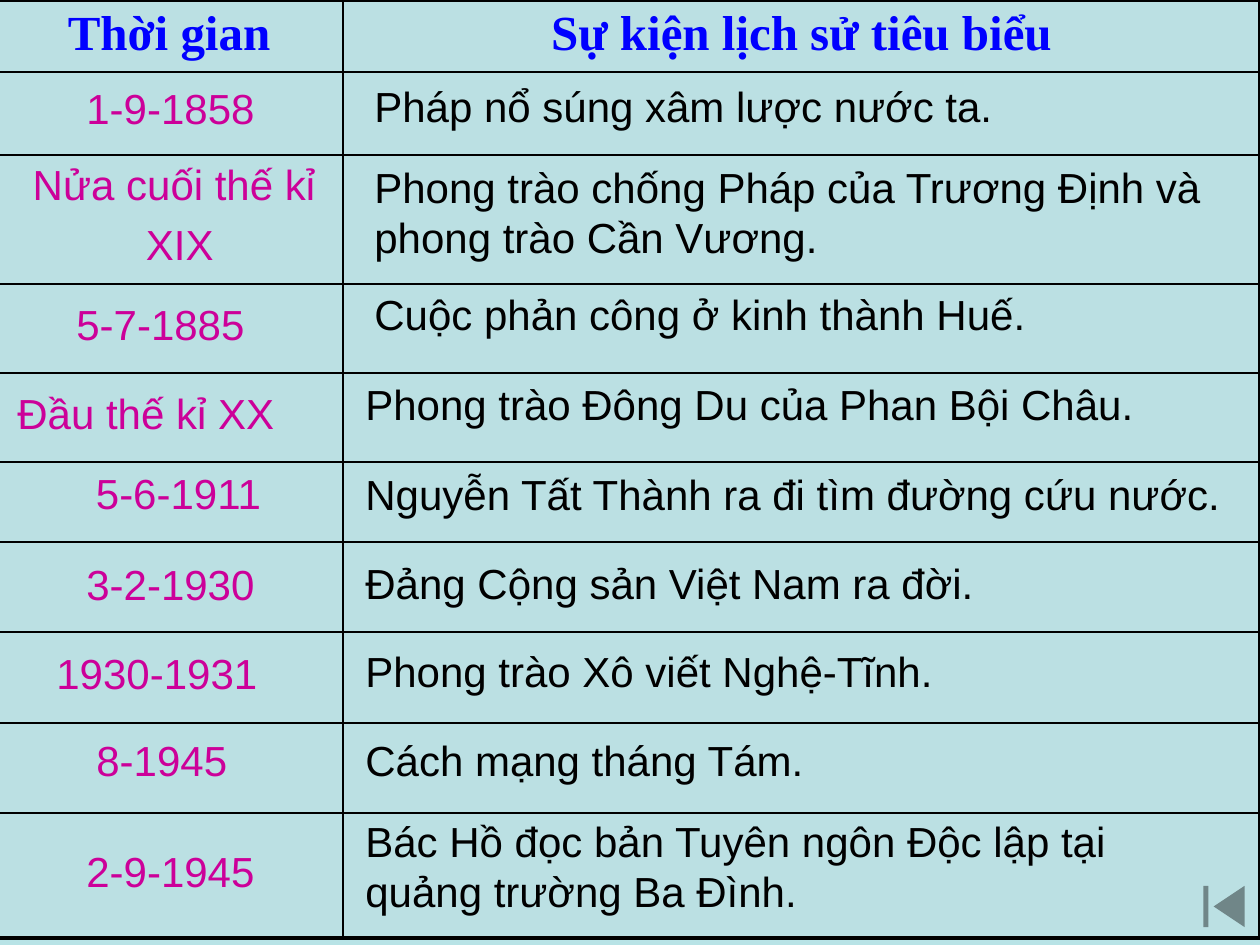
import copy

import lxml.etree
import pptx
import pptx.dml.color
import pptx.enum.shapes
import pptx.enum.text
import pptx.oxml.ns
import pptx.util

PX = 914400 // 126
COLORS = {
    "cell": "BBE0E3", "header": "0000FF", "date": "CC0099", "event": "000000",
    "border": "000000", "top": "6D8688", "middle": "9BBFC2", "bottom": "B8E3E6",
}
LEFT = pptx.enum.text.PP_ALIGN.LEFT
CENTER = pptx.enum.text.PP_ALIGN.CENTER
TABLE_LEFT, TABLE_TOP = -5, 0
COLUMN_WIDTHS = [348, 917]
ROW_HEIGHTS = [72, 83, 129, 89, 89, 80, 90, 91, 90, 125]
HEADERS = ["Thời gian", "Sự kiện lịch sử tiêu biểu"]

# Text, alignment, and left, top, width, height relative to the table cell
DATES = [
    ("1-9-1858", LEFT, (79, 4, 248, 64)),
    ("Nửa cuối thế kỉ\n XIX", CENTER, (10, -3, 338, 202)),
    ("5-7-1885", LEFT, (69, 8, 338, 140)),
    ("Đầu thế kỉ XX", LEFT, (10, 8, 387, 64)),
    ("5-6-1911", CENTER, (0, -1, 367, 140)),
    ("3-2-1930", LEFT, (79, 10, 277, 64)),
    ("1930-1931", LEFT, (49, 9, 297, 64)),
    ("8-1945", LEFT, (89, 5, 248, 64)),
    ("2-9-1945", LEFT, (79, 26, 278, 64)),
]
EVENTS = [
    ("Pháp nổ súng xâm lược nước ta.", LEFT, (19, 2, 725, 140)),
    ("Phong trào chống Pháp của Trương Định và phong trào Cần Vương.", LEFT, (19, 0, 888, 190)),
    ("Cuộc phản công ở kinh thành Huế.", LEFT, (19, -2, 794, 64)),
    ("Phong trào Đông Du của Phan Bội Châu.", LEFT, (10, -1, 973, 64)),
    ("Nguyễn Tất Thành ra đi tìm đường cứu nước.", LEFT, (10, 0, 942, 64)),
    ("Đảng Cộng sản Việt Nam ra đời.", LEFT, (10, 9, 942, 140)),
    ("Phong trào Xô viết Nghệ-Tĩnh.", LEFT, (10, 7, 1081, 64)),
    ("Cách mạng tháng Tám.", LEFT, (10, 5, 784, 64)),
    ("Bác Hồ đọc bản Tuyên ngôn Độc lập tại quảng trường Ba Đình.", LEFT, (10, -4, 883, 115)),
]


def rgb(name):
    return pptx.dml.color.RGBColor.from_string(COLORS[name])


def emu(*lengths):
    return [pptx.util.Emu(length * PX) for length in lengths]


def fill_background(page):
    fill = page.background.fill
    fill.gradient()
    fill.gradient_angle = 270
    for stop, name, position in zip(fill.gradient_stops, ("top", "bottom"), (0, 1)):
        stop.color.rgb = rgb(name)
        stop.position = position
    first = next(page.element.iter(pptx.oxml.ns.qn("a:gs")))
    first.addnext(copy.deepcopy(first))
    middle = fill.gradient_stops[1]
    middle.color.rgb = rgb("middle")
    middle.position = 0.5


def format_paragraph(para, color, size, font, align, bold=False):
    para.alignment = align
    for span in para.runs:
        span.font.size = pptx.util.Pt(size)
        span.font.name = font
        span.font.bold = bold
        span.font.color.rgb = rgb(color)


def set_borders(cell, widths):
    """Draw the cell's sides, with widths in points keyed by L, R, T and B."""
    properties = cell._tc.get_or_add_tcPr()
    for side, width in widths.items():
        line = lxml.etree.SubElement(
            properties, pptx.oxml.ns.qn("a:ln" + side), w=str(pptx.util.Pt(width)))
        solid = lxml.etree.SubElement(line, pptx.oxml.ns.qn("a:solidFill"))
        lxml.etree.SubElement(solid, pptx.oxml.ns.qn("a:srgbClr"), val=COLORS["border"])


def add_grid(page, left, top):
    rows, columns = len(ROW_HEIGHTS), len(COLUMN_WIDTHS)
    frame = page.shapes.add_table(
        rows, columns, *emu(left, top, sum(COLUMN_WIDTHS), sum(ROW_HEIGHTS)))
    table = frame.table
    table.first_row = table.horz_banding = False
    for column, width in zip(table.columns, COLUMN_WIDTHS):
        column.width = emu(width)[0]
    for r, height in enumerate(ROW_HEIGHTS):
        table.rows[r].height = emu(height)[0]
        for c in range(columns):
            cell = table.cell(r, c)
            outer = {"L": c == 0, "R": c == columns - 1, "T": r == 0, "B": r == rows - 1}
            set_borders(cell, {side: 2.25 if edge else 1 for side, edge in outer.items()})
            cell.fill.solid()
            cell.fill.fore_color.rgb = rgb("cell")
    for c, header in enumerate(HEADERS):
        para = table.cell(0, c).text_frame.paragraphs[0]
        para.text = header
        format_paragraph(para, "header", 28, "Times New Roman", CENTER, bold=True)


def add_column_texts(page, left, top, entries, color):
    """Lay the entries over the rows below the header, from the column's top left."""
    for r, (text, align, (x, y, width, height)) in enumerate(entries, start=1):
        row_top = top + sum(ROW_HEIGHTS[:r])
        box = page.shapes.add_textbox(*emu(left + x, row_top + y, width, height))
        frame = box.text_frame
        frame.word_wrap = True
        frame.auto_size = pptx.enum.text.MSO_AUTO_SIZE.SHAPE_TO_FIT_TEXT
        frame.text = text
        for para in frame.paragraphs:
            format_paragraph(para, color, 24, "Arial", align)
        for para in frame.paragraphs[1:]:
            para.space_before = pptx.util.Pt(5.5)


def add_return_button(page, left, top, width, height):
    button = page.shapes.add_shape(
        pptx.enum.shapes.MSO_SHAPE.ACTION_BUTTON_BEGINNING, *emu(left, top, width, height))
    button.shadow.inherit = False
    button.fill.solid()
    button.fill.fore_color.rgb = rgb("cell")
    button.line.fill.background()


def main():
    deck = pptx.Presentation()
    deck.slide_width, deck.slide_height = emu(1260, 945)
    page = deck.slides.add_slide(deck.slide_layouts[6])
    fill_background(page)
    add_grid(page, TABLE_LEFT, TABLE_TOP)
    add_column_texts(page, TABLE_LEFT, TABLE_TOP, DATES, "date")
    add_column_texts(page, TABLE_LEFT + COLUMN_WIDTHS[0], TABLE_TOP, EVENTS, "event")
    add_return_button(page, 1192, 879, 64, 55)
    deck.save("out.pptx")


if __name__ == "__main__":
    main()
